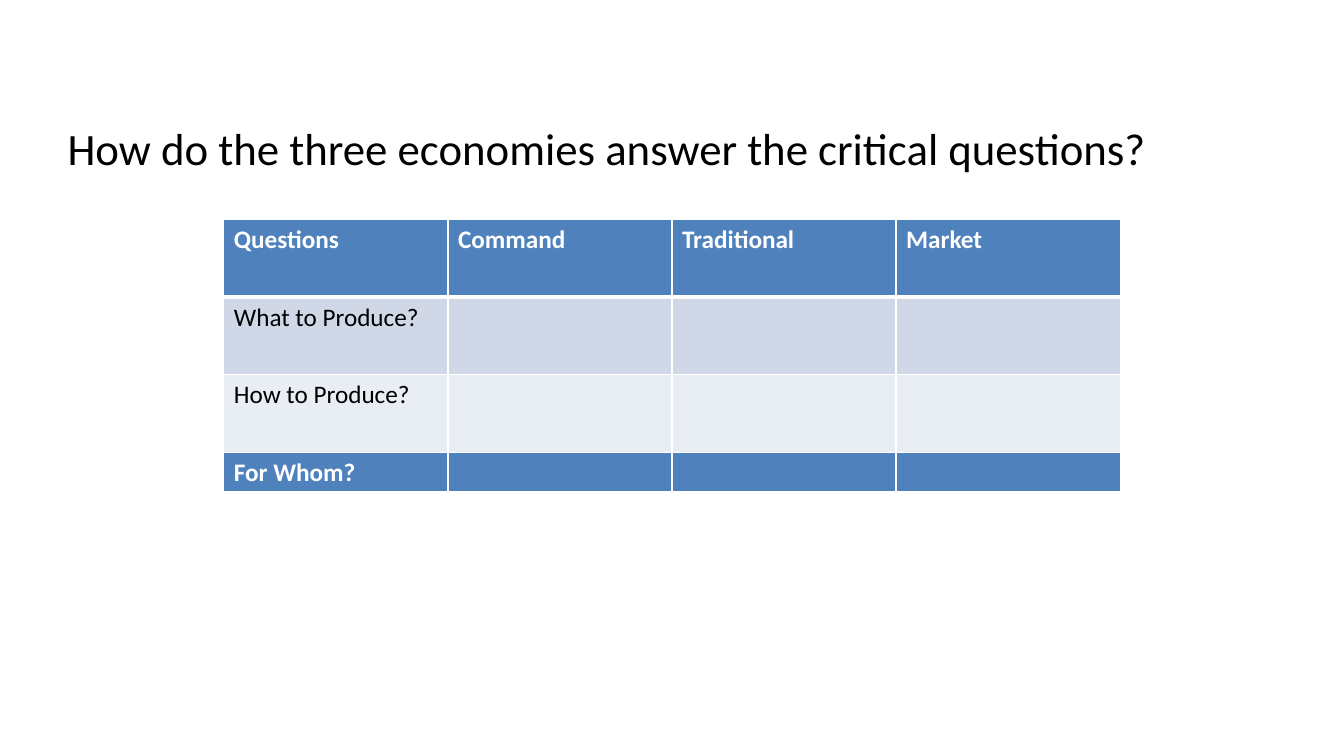
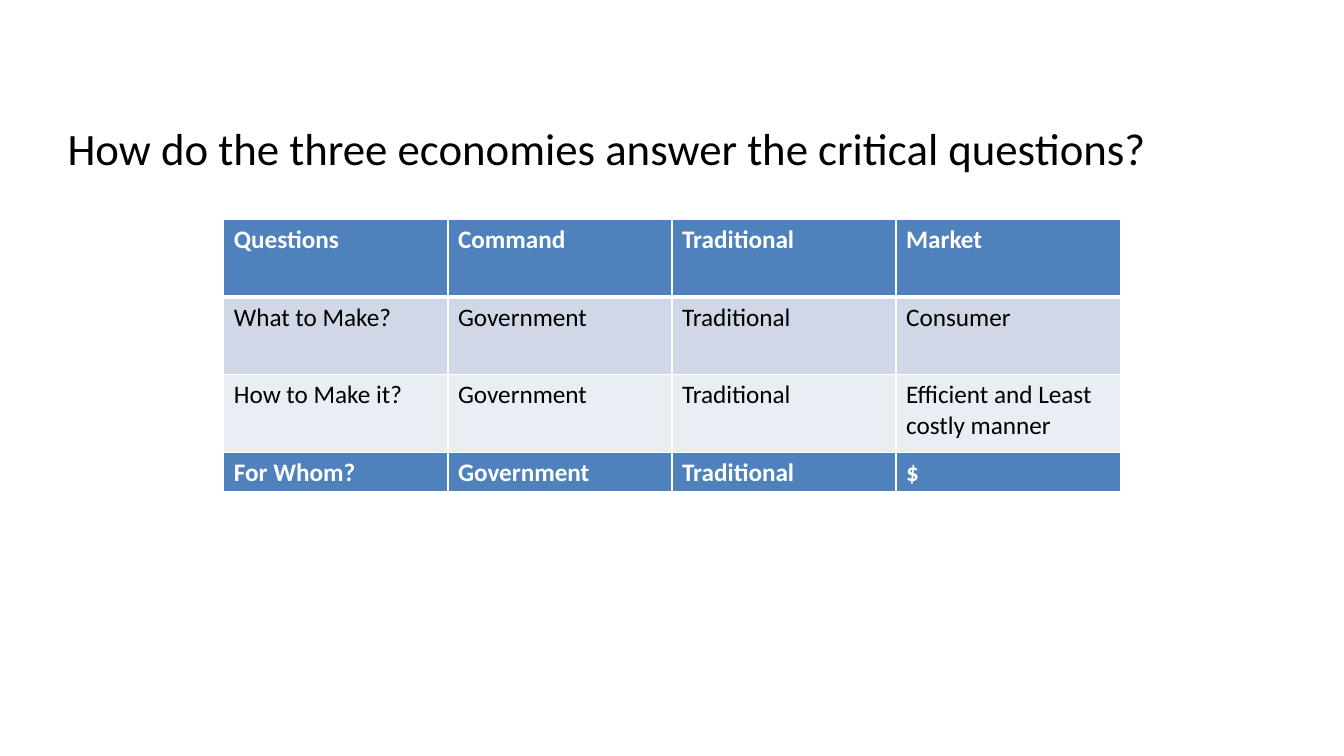
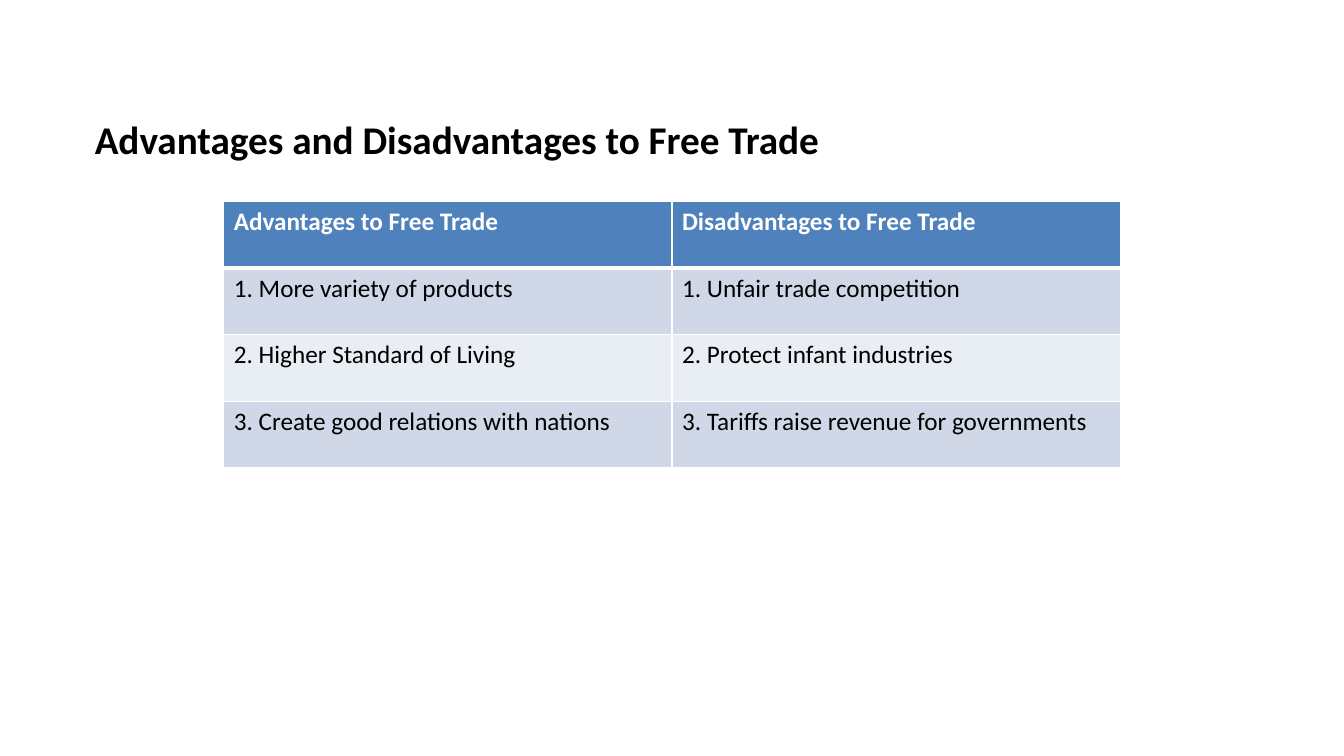
from lxml import etree
from pptx import Presentation
from pptx import util as u
from pptx.dml.color import RGBColor
from pptx.enum import text
from pptx.oxml.ns import qn

BLACK = RGBColor(0x00, 0x00, 0x00)
WHITE = RGBColor(0xFF, 0xFF, 0xFF)
BLUE = RGBColor(0x4F, 0x81, 0xBD)
BANDS = (RGBColor(0xD0, 0xD8, 0xE8), RGBColor(0xE9, 0xED, 0xF4))
FONT = "Calibri"
TABLE_LEFT, TABLE_WIDTH = 2.22, 8.89

ECONOMIES = ["Questions", "Command", "Traditional", "Market"]
BLANKS = [""] * 3


class Deck:
    """Holds the shared style and the current slide."""

    def __init__(self):
        self.prs = Presentation()
        self.prs.slide_width = u.Inches(13.33)
        self.prs.slide_height = u.Inches(7.5)
        self.s = None

    def slide(self):
        self.s = self.prs.slides.add_slide(self.prs.slide_layouts[5])

    def style(self, font, **values):
        for name, value in {"name": FONT, **values}.items():
            if name == "color":
                font.color.rgb = value
            else:
                setattr(font, name, value)

    def title(self, words, left, top, width, height, size, bold=False):
        sp = self.s.shapes.title
        box = dict(left=left, top=top, width=width, height=height)
        for name, value in box.items():
            setattr(sp, name, u.Inches(value))
        tf = sp.text_frame
        tf.text = words
        tf.word_wrap = True
        tf.auto_size = text.MSO_AUTO_SIZE.SHAPE_TO_FIT_TEXT
        tf.vertical_anchor = text.MSO_ANCHOR.TOP
        p = tf.paragraphs[0]
        p.alignment = text.PP_ALIGN.LEFT
        self.style(p.runs[0].font, size=u.Pt(size), bold=bold, color=BLACK)

    def borders(self, cell, top, bottom):
        tcPr = cell._tc.get_or_add_tcPr()
        for side, width in dict(L=1, R=1, T=top, B=bottom).items():
            ln = etree.SubElement(tcPr, qn(f"a:ln{side}"), w=str(u.Pt(width)))
            fill = etree.SubElement(ln, qn("a:solidFill"))
            etree.SubElement(fill, qn("a:srgbClr"), val=str(WHITE))

    def table(self, rows, top, row_height):
        """The first row is a blue heading; the rows below are banded."""
        frame = self.s.shapes.add_table(
            len(rows), len(rows[0]), u.Inches(TABLE_LEFT), u.Inches(top),
            u.Inches(TABLE_WIDTH), u.Inches(row_height * len(rows)))
        for i, row in enumerate(rows):
            heading = i == 0
            for j, words in enumerate(row):
                cell = frame.table.cell(i, j)
                self.borders(cell, 3 if i == 1 else 1, 3 if heading else 1)
                cell.fill.solid()
                cell.fill.fore_color.rgb = BLUE if heading else BANDS[(i - 1) % 2]
                if words:
                    r = cell.text_frame.paragraphs[0].add_run()
                    r.text = words
                    self.style(r.font, size=u.Pt(18), bold=heading,
                               color=WHITE if heading else BLACK)

    def economies(self, what, how, whom):
        """Questions grid with a closing row in the heading style."""
        self.slide()
        self.title("How do the three economies answer the critical questions?",
                   0.57, 1.15, 12.15, 0.64, 32)
        self.table([ECONOMIES, what, how], 2.18, 0.77)
        self.table([whom], 4.49, 0.4)


def main():
    deck = Deck()

    # Open questions
    deck.economies(["What to Produce?"] + BLANKS,
                   ["How to Produce?"] + BLANKS,
                   ["For Whom?"] + BLANKS)

    # Answers
    shared = ["Government", "Traditional"]
    deck.economies(["What to Make?", *shared, "Consumer"],
                   ["How to Make it?", *shared, "Efficient and Least costly manner"],
                   ["For Whom?", *shared, "$"])

    # Free trade
    deck.slide()
    deck.title("Advantages and Disadvantages to Free Trade",
               0.84, 1.09, 11.48, 0.57, 28, bold=True)
    deck.table([
        ["Advantages to Free Trade", "Disadvantages to Free Trade"],
        ["1. More variety of products", "1. Unfair trade competition"],
        ["2. Higher Standard of Living", "2. Protect infant industries"],
        ["3. Create good relations with nations",
         "3. Tariffs raise revenue for governments"],
    ], 2, 0.66)

    deck.prs.save("out.pptx")


if __name__ == "__main__":
    main()
